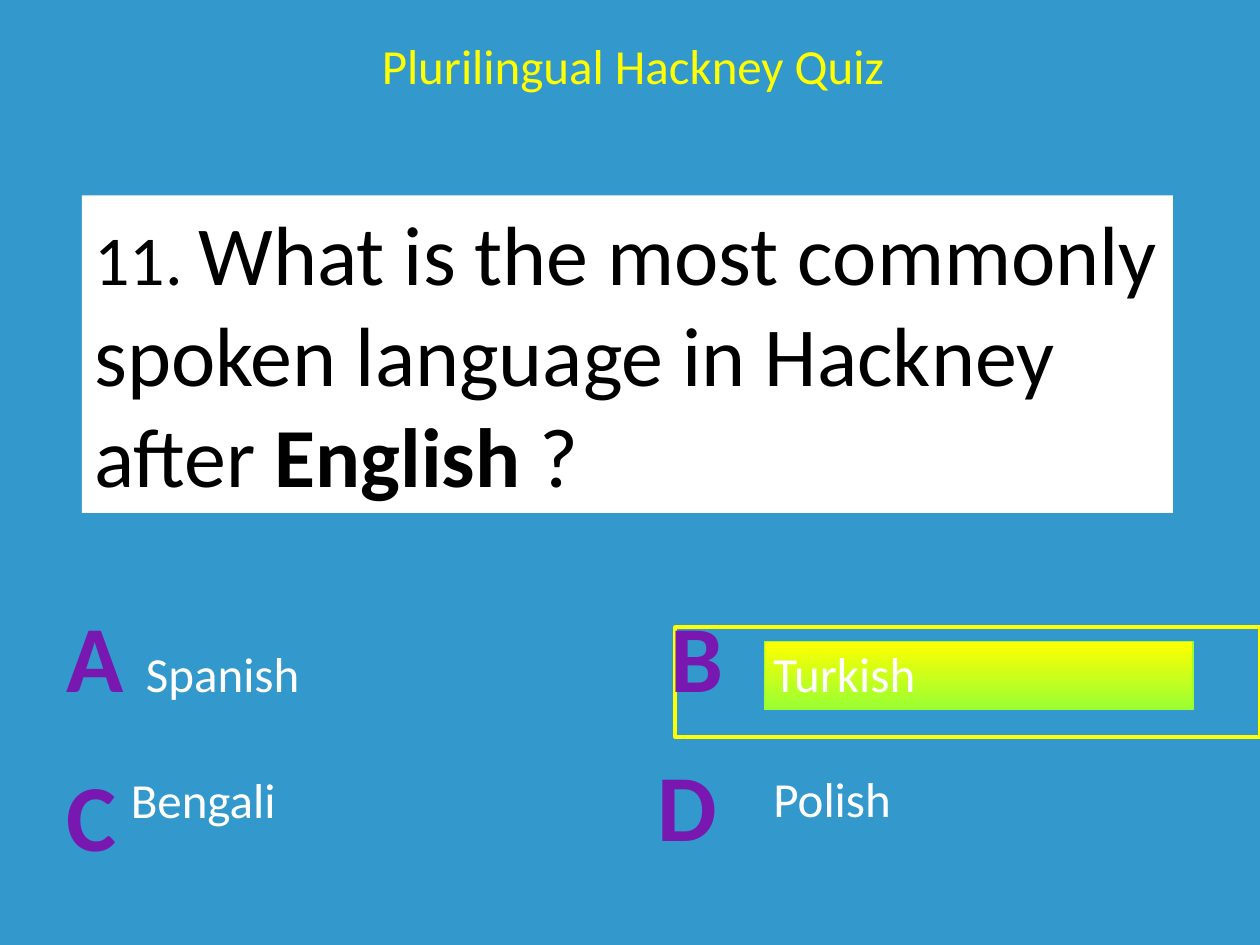
from pptx import Presentation
from pptx.dml.color import RGBColor
from pptx.enum.shapes import MSO_SHAPE
from pptx.enum.text import MSO_ANCHOR, MSO_AUTO_SIZE, PP_ALIGN
from pptx.util import Inches, Pt

YELLOW, LIME, WHITE = "FFFF00", "99FF33", "FFFFFF"
ANSWER = {"size": 28, "color": WHITE}
LETTER = {"size": 54, "bold": True, "color": "7918B0"}

# Letter: (letter box, answer, answer box)
ANSWERS = {
    "A": ((0.43, 4.7, 0.61, 1.01), "Spanish", (1.06, 5.06, 1.48, 0.57)),
    "B": ((5.16, 4.7, 0.75, 1.01), "Turkish", (6.04, 5.06, 1.39, 0.57)),
    "C": ((0.35, 5.96, 0.75, 1.01), "Bengali", (0.94, 6.06, 1.43, 0.57)),
    "D": ((5.08, 5.88, 0.75, 1.01), "Polish", (6.04, 6.05, 1.19, 0.57)),
}


def rgb(value):
    return RGBColor.from_string(value)


def inches(box):
    return [Inches(v) for v in box]


def set_text(sp, runs, align=PP_ALIGN.LEFT, wrap=False):
    """Fill a shape with one paragraph of (text, format) runs."""
    tf = sp.text_frame
    tf.word_wrap = wrap
    tf.auto_size = MSO_AUTO_SIZE.SHAPE_TO_FIT_TEXT
    tf.vertical_anchor = MSO_ANCHOR.TOP
    p = tf.paragraphs[0]
    p.alignment = align
    for text, fmt in runs:
        r = p.add_run()
        r.text = text
        values = {"name": "Calibri", "bold": False, **fmt}
        r.font.color.rgb = rgb(values.pop("color"))
        values["size"] = Pt(values["size"])
        for name, value in values.items():
            setattr(r.font, name, value)


def add_title(s, text, box):
    sp = s.shapes.title
    sp.left, sp.top, sp.width, sp.height = inches(box)
    set_text(sp, [(text, {"size": 28, "color": YELLOW})])


def add_label(s, text, box, fmt, align=PP_ALIGN.LEFT):
    sp = s.shapes.add_textbox(*inches(box))
    set_text(sp, [(text, fmt)], align)


def add_rect(s, box, fill=None, line=None, width=0.75):
    """Rectangle with no fill, one colour or a top-to-bottom gradient."""
    sp = s.shapes.add_shape(MSO_SHAPE.RECTANGLE, *inches(box))
    sp.shadow.inherit = False
    if fill is None:
        sp.fill.background()
    elif isinstance(fill, str):
        sp.fill.solid()
        sp.fill.fore_color.rgb = rgb(fill)
    else:
        sp.fill.gradient()
        sp.fill.gradient_angle = 270
        for stop, color in zip(sp.fill.gradient_stops, fill):
            stop.color.rgb = rgb(color)
    if line:
        sp.line.color.rgb = rgb(line)
        sp.line.width = Pt(width)
    else:
        sp.line.fill.background()
    return sp


def main():
    prs = Presentation()
    prs.slide_width, prs.slide_height = Inches(10), Inches(7.5)
    s = prs.slides.add_slide(prs.slide_layouts[5])
    s.background.fill.solid()
    s.background.fill.fore_color.rgb = rgb("3399CC")

    # Title
    add_title(s, "Plurilingual Hackney Quiz", (2.93, 0.23, 4.37, 0.57))

    # Highlight of the correct answer
    add_rect(s, (6.07, 5.09, 3.4, 0.54), (YELLOW, LIME), LIME)
    add_rect(s, (5.36, 4.98, 4.64, 0.87), line=YELLOW, width=2.25)

    # Answers with their letters
    for letter, (letter_box, answer, answer_box) in ANSWERS.items():
        add_label(s, answer, answer_box, ANSWER)
        add_label(s, letter, letter_box, LETTER, PP_ALIGN.CENTER)

    # Question
    sp = add_rect(s, (0.65, 1.55, 8.66, 2.52), WHITE)
    large = {"size": 48, "color": "000000"}
    set_text(sp, [
        ("11. ", {**large, "size": 40}),
        ("What is the most commonly spoken language in Hackney after ", large),
        ("English", {**large, "bold": True}),
        (" ?", large),
    ], wrap=True)

    prs.save("out.pptx")


if __name__ == "__main__":
    main()
